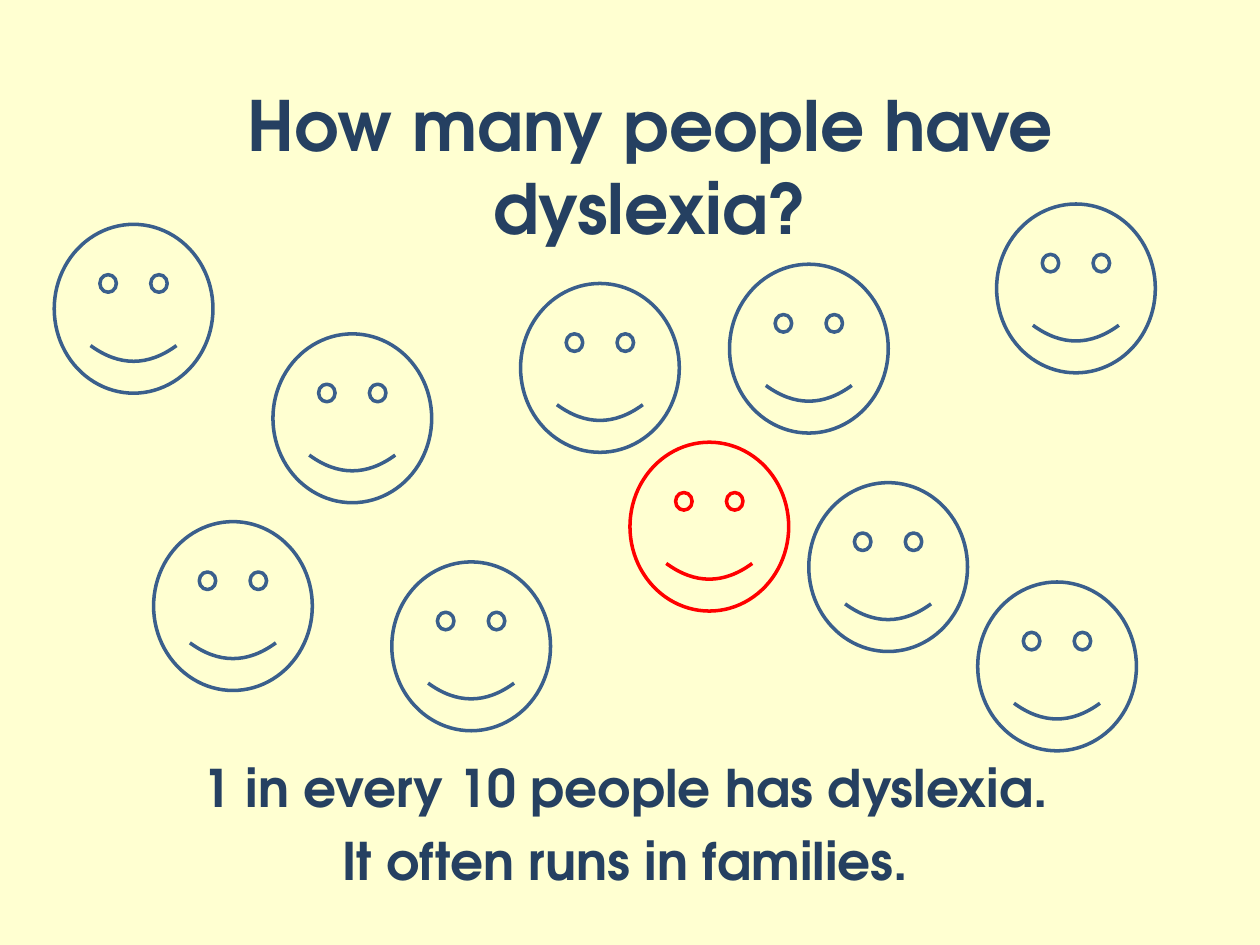
"""Build a slide showing that one in ten people has dyslexia."""
from pptx import Presentation
from pptx.dml.color import RGBColor
from pptx.enum import shapes, text
from pptx.util import Pt

CREAM = RGBColor(0xFF, 0xFF, 0xD1)
NAVY = RGBColor(0x25, 0x40, 0x61)
BLUE = RGBColor(0x3A, 0x5F, 0x8C)
RED = RGBColor(0xFF, 0x00, 0x00)
FACE = "TeX Gyre Adventor"


def write(frame, lines, size):
    frame.word_wrap = True
    frame.auto_size = text.MSO_AUTO_SIZE.NONE
    frame.text = "\n".join(lines)
    for i, para in enumerate(frame.paragraphs):
        para.alignment = text.PP_ALIGN.CENTER
        para.space_before = Pt(5.9 if i else 0)
        para.font.name = FACE
        para.font.size = Pt(size)
        para.font.bold = True
        para.font.color.rgb = NAVY


deck = Presentation()
deck.slide_width, deck.slide_height = Pt(720), Pt(540)
slide = deck.slides.add_slide(deck.slide_layouts[5])
slide.background.fill.solid()
slide.background.fill.fore_color.rgb = CREAM

title = slide.shapes.title
title.left, title.top = Pt(65.5), Pt(49)
title.width, title.height = Pt(612), Pt(90.7)
title.text_frame.vertical_anchor = text.MSO_ANCHOR.MIDDLE
write(title.text_frame, ["How many people have dyslexia?"], 39.6)

note = slide.shapes.add_textbox(Pt(59.8), Pt(428.4), Pt(595.4), Pt(79.2))
write(note.text_frame,
      ["1 in every 10 people has dyslexia.", "It often runs in families."], 29.6)

people = [
    (31, 128.2, BLUE), (156, 190.8, BLUE), (297.5, 162, BLUE),
    (416.9, 151, BLUE), (87.8, 298.1, BLUE), (223.9, 321.1, BLUE),
    (360, 252.7, RED), (558.7, 332.6, BLUE), (462.2, 275.8, BLUE),
    (569.5, 116.6, BLUE),
]
for left, top, color in people:
    smile = slide.shapes.add_shape(
        shapes.MSO_SHAPE.SMILEY_FACE, Pt(left), Pt(top), Pt(90.7), Pt(96.5))
    smile.shadow.inherit = False
    smile.fill.background()
    smile.line.color.rgb = color
    smile.line.width = Pt(2)

deck.save("out.pptx")
